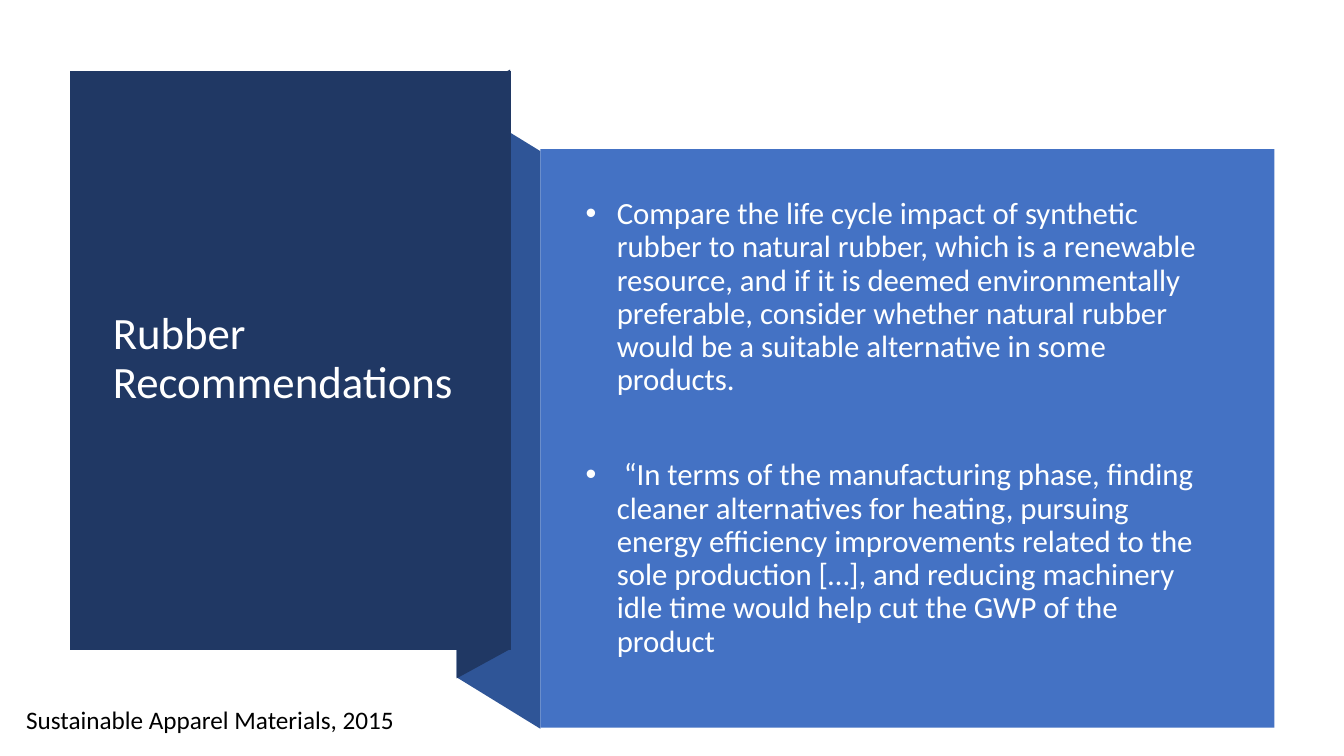
from lxml import etree
from pptx import Presentation
from pptx.dml.color import RGBColor as RGB
from pptx.enum.shapes import MSO_SHAPE as SHAPE
from pptx.enum.text import MSO_ANCHOR as ANCHOR
from pptx.oxml.ns import qn
from pptx.util import Inches, Pt

COLORS = {"navy": "203864", "fold": "2F5597", "panel": "4472C4",
          "white": "FFFFFF", "body": "FEFFFF", "black": "000000"}

RECOMMENDATIONS = [
    "Compare the life cycle impact of synthetic rubber to natural rubber, "
    "which is a renewable resource, and if it is deemed environmentally "
    "preferable, consider whether natural rubber would be a suitable "
    "alternative in some products.",
    " “In terms of the manufacturing phase, finding cleaner alternatives for "
    "heating, pursuing energy efficiency improvements related to the sole "
    "production […], and reducing machinery idle time would help cut the GWP "
    "of the product",
]


def paint(sp, color):
    sp.shadow.inherit = False
    sp.fill.solid()
    sp.fill.fore_color.rgb = RGB.from_string(COLORS[color])
    sp.line.fill.background()


def add_outline(s, points, color):
    pts = [(Inches(x), Inches(y)) for x, y in points]
    fb = s.shapes.build_freeform(*pts[0], scale=1.0)
    fb.add_line_segments(pts[1:], close=True)
    paint(fb.convert_to_shape(), color)


def add_rect(s, box, color):
    paint(s.shapes.add_shape(SHAPE.RECTANGLE, *map(Inches, box)), color)


def set_bullet(p, indent):
    pPr = p._p.get_or_add_pPr()
    pPr.set("marL", str(Inches(indent)))
    pPr.set("indent", str(-Inches(indent)))
    etree.SubElement(pPr, qn("a:buFont")).set("typeface", "Arial")
    etree.SubElement(pPr, qn("a:buChar")).set("char", "•")


def add_text(s, box, paragraphs, size, color, anchor=ANCHOR.MIDDLE, wrap=True,
             line=None, before=0, gap=0, after=0, bullet=None):
    tf = s.shapes.add_textbox(*map(Inches, box)).text_frame
    tf.word_wrap = wrap
    tf.vertical_anchor = anchor
    for i, text in enumerate(paragraphs):
        p = tf.add_paragraph() if i else tf.paragraphs[0]
        p.line_spacing = line
        p.space_before = Pt(gap if i else before)
        p.space_after = Pt(after)
        if bullet:
            set_bullet(p, bullet)
        r = p.add_run()
        r.text = text
        r.font.name = "Calibri"
        r.font.size = Pt(size)
        r.font.color.rgb = RGB.from_string(COLORS[color])


def add_ribbon(s, x, y, w, h):
    """Folded band that joins the title block to the panel."""
    right, bottom = x + w, y + h
    rise, tuck = 0.51, 0.53
    add_outline(s, [(right, bottom), (x, bottom - rise), (x, y),
                    (right, y + rise)], "fold")
    # Dark flap behind the title block
    flap_top, flap_bottom, slope = y - 0.3, y + 5.74, 0.29
    add_outline(s, [(x + tuck, flap_bottom - slope), (x, flap_bottom),
                    (x, flap_top + slope), (x + tuck, flap_top)], "navy")


def add_title_block(s, x, y, w, h):
    add_outline(s, [(x, y), (x + w, y), (x + w, y + h), (x, y + h)], "navy")
    add_text(s, (x + 0.33, y + 0.37, w - 0.67, h - 0.76),
             ["Rubber Recommendations"], 32, "white", line=0.9)


def add_panel(s, x, y, w, h):
    add_rect(s, (x, y, w, h), "panel")
    add_text(s, (x + 0.35, y + 0.4, w - 0.82, h - 1), RECOMMENDATIONS, 22,
             "body", line=0.9, before=10, gap=44, bullet=0.31)


def add_source(s, x, y, w, h):
    add_text(s, (x, y, w, h), ["Sustainable Apparel Materials, 2015"], 18,
             "black", anchor=ANCHOR.TOP, wrap=False, after=6)


def main():
    prs = Presentation()
    prs.slide_width, prs.slide_height = Inches(13.33), Inches(7.5)
    s = prs.slides.add_slide(prs.slide_layouts[6])
    add_ribbon(s, 4.53, 0.99, 0.83, 6.24)
    add_title_block(s, 0.69, 0.7, 4.38, 5.75)
    add_panel(s, 5.36, 1.48, 7.28, 5.74)
    add_source(s, 0.16, 6.94, 3.95, 0.4)
    prs.save("out.pptx")


if __name__ == "__main__":
    main()
